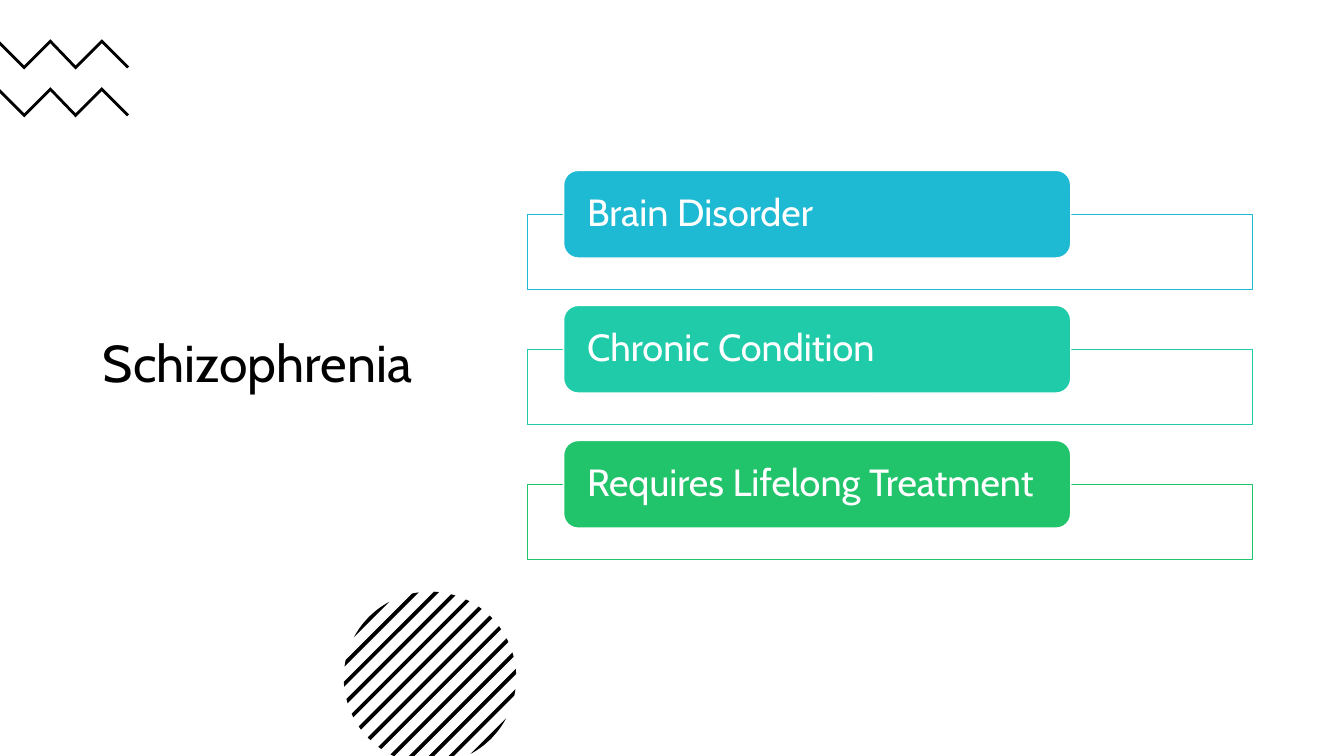
from math import sqrt

from pptx import Presentation
from pptx.dml.color import RGBColor
from pptx.enum.shapes import MSO_SHAPE as SHAPE
from pptx.enum.text import MSO_ANCHOR as ANCHOR, MSO_AUTO_SIZE as FIT, PP_ALIGN as ALIGN
from pptx.util import Pt

PX = 9144  # 100 px to the inch
WIDTH, HEIGHT = 1333, 750
BLACK, WHITE = "000000", "FFFFFF"
CARDS = [
    ("Brain Disorder", "1EB9D3"),
    ("Chronic Condition", "20CBA9"),
    ("Requires Lifelong Treatment", "21C46B"),
]


def px(*lengths):
    return [round(n * PX) for n in lengths]


def rgb(hex_text):
    return RGBColor.from_string(hex_text)


def paint(sp, fill, line=None):
    sp.shadow.inherit = False
    sp.fill.solid()
    sp.fill.fore_color.rgb = rgb(fill)
    if line:
        sp.line.color.rgb = rgb(line)
        sp.line.width = Pt(1)
    else:
        sp.line.fill.background()


def write(sp, text, size, color, inset):
    tf = sp.text_frame
    side = inset * PX
    frame = dict(word_wrap=True, auto_size=FIT.NONE, vertical_anchor=ANCHOR.MIDDLE,
                 margin_left=side, margin_right=side, margin_top=0, margin_bottom=0)
    for name, value in frame.items():
        setattr(tf, name, value)
    p = tf.paragraphs[0]
    p.alignment, p.line_spacing = ALIGN.LEFT, 0.9
    r = p.add_run()
    r.text = text
    for name, value in dict(name="Cabin", size=Pt(size)).items():
        setattr(r.font, name, value)
    r.font.color.rgb = rgb(color)


def add_polygon(s, points):
    start, *rest = [px(*point) for point in points]
    builder = s.shapes.build_freeform(*start)
    builder.add_line_segments(rest, close=True)
    paint(builder.convert_to_shape(), BLACK)


def add_title(s, x, y, w, h):
    sp = s.shapes.title
    sp.left, sp.top, sp.width, sp.height = px(x, y, w, h)
    write(sp, "Schizophrenia", 37, BLACK, 10)


def add_zigzag(s, x, y):
    """Ribbon that enters from the slide's left edge."""
    thick = 4
    upper = [(0, 2), (24, 26), (50, 0), (75, 26), (101, 0)]
    lower = [(dx, dy + thick) for dx, dy in reversed(upper)]
    outline = upper + [(128, 27), (126, 29)] + lower
    add_polygon(s, [(x + dx, y + dy) for dx, dy in outline])


def add_striped_circle(s, x, y, size):
    """Diagonal stripes cut by the circle and by the slide's bottom edge."""
    radius = size / 2
    cx, cy = x + radius, y + radius
    pitch, thick, steps = 13.95, 3.8, 8

    def arc_point(offset, side):
        reach = sqrt(max(radius ** 2 - offset ** 2, 0))
        if side < 0:
            reach = min(reach, (HEIGHT - cy) * sqrt(2) - offset)
        return cx + (offset + side * reach) / sqrt(2), cy + (offset - side * reach) / sqrt(2)

    for stripe in range(-6, 7):
        offsets = [stripe * pitch + thick * (i / steps - 0.5) for i in range(steps + 1)]
        right_end = [arc_point(d, 1) for d in offsets]
        left_end = [arc_point(d, -1) for d in reversed(offsets)]
        add_polygon(s, right_end + left_end)


def add_card(s, x, y, w, h, text, color):
    frame = s.shapes.add_shape(SHAPE.RECTANGLE, *px(x, y, w, h))
    paint(frame, WHITE, color)
    label = s.shapes.add_shape(SHAPE.ROUNDED_RECTANGLE, *px(x + 36, y - 44, 503, 87))
    paint(label, color, WHITE)
    # The rounded corner insets the text area by about 4 px
    write(label, text, 27, WHITE, 19)


def main():
    prs = Presentation()
    prs.slide_width, prs.slide_height = px(WIDTH, HEIGHT)
    s = prs.slides.add_slide(prs.slide_layouts[5])
    add_striped_circle(s, 341, 587, 171)
    add_title(s, 92, 131, 350, 463)
    for row in range(2):
        add_zigzag(s, 0, 39 + 47.5 * row)
    for row, (text, color) in enumerate(CARDS):
        add_card(s, 523, 213 + 134 * row, 719, 74, text, color)
    prs.save("out.pptx")


if __name__ == "__main__":
    main()
